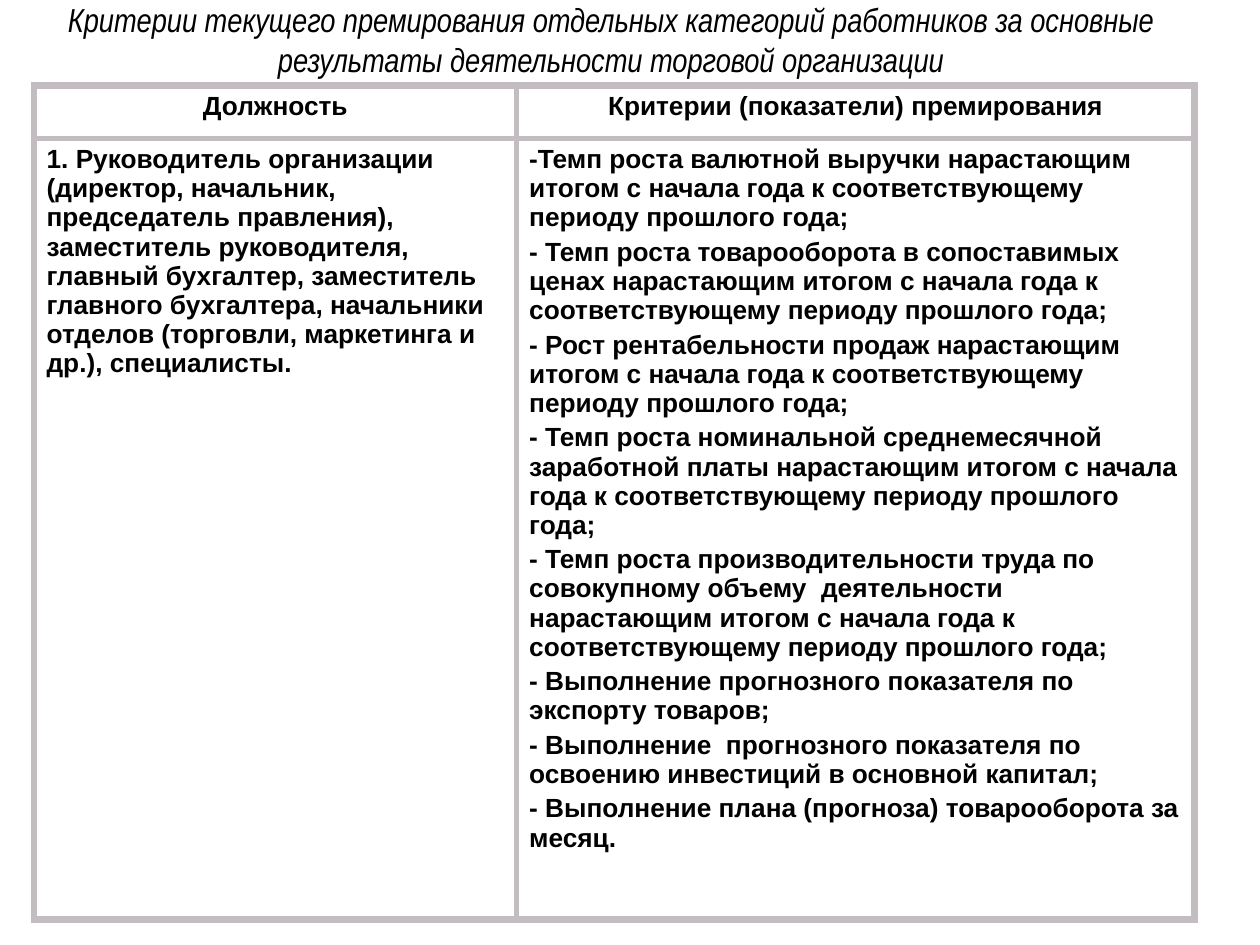
import dataclasses

import lxml.etree
import pptx
import pptx.dml.color
import pptx.enum.text
import pptx.oxml.ns
import pptx.util

COLORS = {"text": "000000", "border": "C3BDC2", "cell": "FFFFFF"}
WIDTH, HEIGHT = 10, 7.5
OUTER_LINE, INNER_LINE = 4.5, 3
COLUMNS = (3.83, 5.38)
ROWS = (0.42, 6.2)
ALIGN = pptx.enum.text.PP_ALIGN

TITLE = ("Критерии текущего премирования отдельных категорий работников "
         "за основные результаты деятельности торговой организации")
POSITIONS = ("1. Руководитель организации (директор, начальник, председатель правления), "
             "заместитель руководителя, главный бухгалтер, заместитель главного бухгалтера, "
             "начальники отделов (торговли, маркетинга и др.), специалисты.")
PERIOD = "нарастающим итогом с начала года к соответствующему периоду прошлого года;"
CRITERIA = (
    f"-Темп роста валютной выручки {PERIOD}",
    f"- Темп роста товарооборота в сопоставимых ценах {PERIOD}",
    f"- Рост рентабельности продаж {PERIOD}",
    f"- Темп роста номинальной среднемесячной заработной платы {PERIOD}",
    f"- Темп роста производительности труда по совокупному объему  деятельности {PERIOD}",
    "- Выполнение прогнозного показателя по экспорту товаров;",
    "- Выполнение  прогнозного показателя по освоению инвестиций в основной капитал;",
    "- Выполнение плана (прогноза) товарооборота за месяц.",
)


@dataclasses.dataclass(frozen=True)
class TextStyle:
    font: str
    size: float
    align: ALIGN
    bold: bool = False
    italic: bool = False
    before: float = 0


TITLE_STYLE = TextStyle("Arial Narrow", 19, ALIGN.CENTER, italic=True)
HEADER_STYLE = TextStyle("Arial", 15, ALIGN.CENTER, bold=True, before=3)
BODY_STYLE = TextStyle("Arial", 15, ALIGN.LEFT, bold=True, before=3)


@dataclasses.dataclass(frozen=True)
class CellContent:
    row: int
    column: int
    lines: tuple[str, ...]
    style: TextStyle


CELLS = (
    CellContent(0, 0, ("Должность",), HEADER_STYLE),
    CellContent(0, 1, ("Критерии (показатели) премирования",), HEADER_STYLE),
    CellContent(1, 0, (POSITIONS,), BODY_STYLE),
    CellContent(1, 1, CRITERIA, BODY_STYLE),
)


def color(name: str) -> pptx.dml.color.RGBColor:
    return pptx.dml.color.RGBColor.from_string(COLORS[name])


def write(frame, lines: tuple[str, ...], style: TextStyle) -> None:
    for index, line in enumerate(lines):
        para = frame.add_paragraph() if index else frame.paragraphs[0]
        para.text = line
        para.alignment = style.align
        para.space_before = pptx.util.Pt(style.before)
        para.font.name = style.font
        para.font.size = pptx.util.Pt(style.size)
        para.font.bold = style.bold
        para.font.italic = style.italic
        para.font.color.rgb = color("text")


def set_borders(cell, row: int, column: int) -> None:
    """Thick lines on the table's edge, thinner ones between cells."""
    on_edge = {"lnL": column == 0, "lnR": column == len(COLUMNS) - 1,
               "lnT": row == 0, "lnB": row == len(ROWS) - 1}
    properties = cell._tc.get_or_add_tcPr()
    qn = pptx.oxml.ns.qn
    for position, (side, outer) in enumerate(on_edge.items()):
        width = pptx.util.Pt(OUTER_LINE if outer else INNER_LINE)
        line = lxml.etree.Element(qn(f"a:{side}"), w=str(int(width)))
        fill = lxml.etree.SubElement(line, qn("a:solidFill"))
        lxml.etree.SubElement(fill, qn("a:srgbClr"), val=COLORS["border"])
        properties.insert(position, line)


def add_title(page) -> None:
    box = page.shapes.add_textbox(0, 0, pptx.util.Inches(0.97 * WIDTH),
                                  pptx.util.Inches(0.084 * HEIGHT))
    box.text_frame.word_wrap = True
    box.text_frame.vertical_anchor = pptx.enum.text.MSO_ANCHOR.MIDDLE
    write(box.text_frame, (TITLE,), TITLE_STYLE)


def add_criteria_table(page) -> None:
    inches = pptx.util.Inches
    table = page.shapes.add_table(len(ROWS), len(COLUMNS), inches(0.27), inches(0.68),
                                  inches(sum(COLUMNS)), inches(sum(ROWS))).table
    table.first_row = table.horz_banding = False
    for column, width in zip(table.columns, COLUMNS):
        column.width = inches(width)
    for row, height in zip(table.rows, ROWS):
        row.height = inches(height)
    for content in CELLS:
        cell = table.cell(content.row, content.column)
        cell.fill.solid()
        cell.fill.fore_color.rgb = color("cell")
        write(cell.text_frame, content.lines, content.style)
        set_borders(cell, content.row, content.column)


def main() -> None:
    deck = pptx.Presentation()
    deck.slide_width = pptx.util.Inches(WIDTH)
    deck.slide_height = pptx.util.Inches(HEIGHT)
    page = deck.slides.add_slide(deck.slide_layouts[6])
    add_title(page)
    add_criteria_table(page)
    deck.save("out.pptx")


if __name__ == "__main__":
    main()
